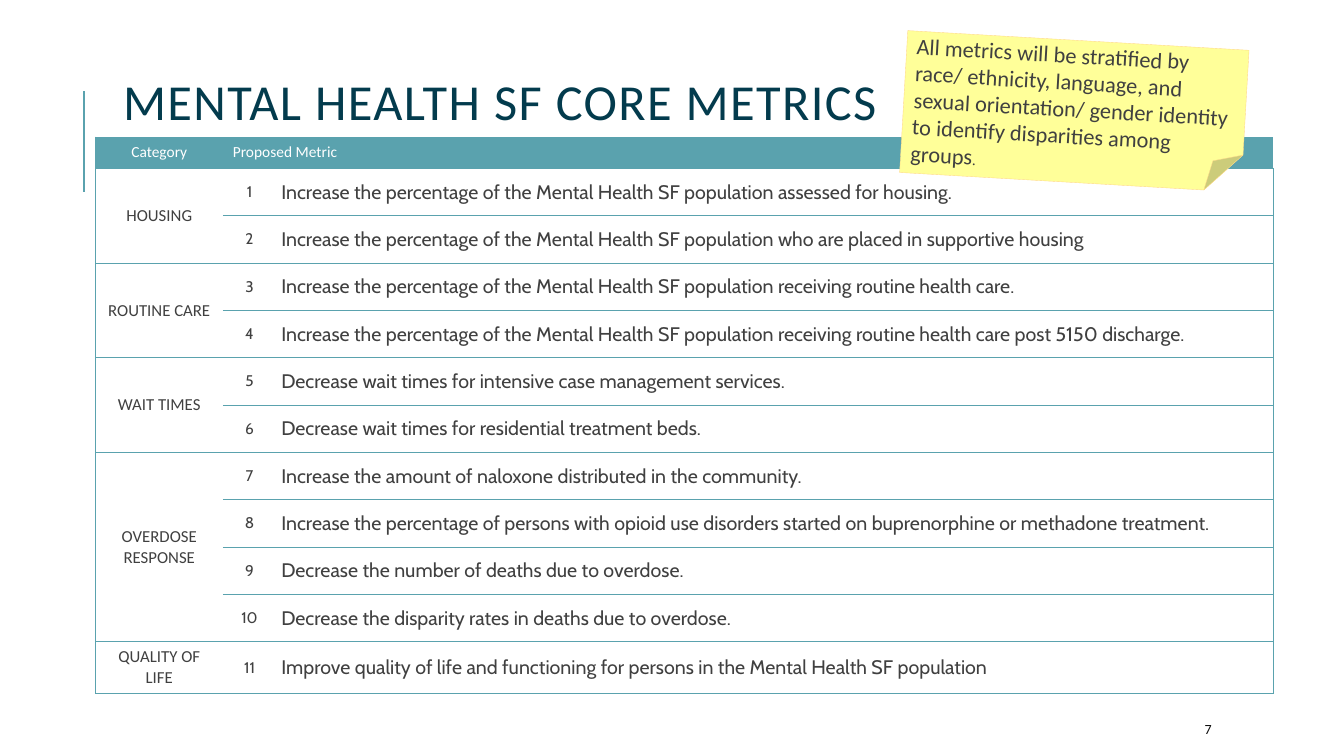
"""Build the Mental Health SF core metrics slide."""
from dataclasses import dataclass

from lxml.etree import SubElement
from pptx import Presentation
from pptx.dml.color import RGBColor
from pptx.enum.shapes import MSO_CONNECTOR, MSO_SHAPE
from pptx.enum.text import MSO_ANCHOR, PP_ALIGN
from pptx.oxml.ns import qn
from pptx.util import Inches, Pt


@dataclass(frozen=True)
class Theme:
    teal: RGBColor = RGBColor.from_string("5AA2AE")
    navy: RGBColor = RGBColor.from_string("033B4D")
    gray: RGBColor = RGBColor.from_string("404040")
    black: RGBColor = RGBColor.from_string("0D0D0D")
    white: RGBColor = RGBColor.from_string("FFFFFF")
    note: RGBColor = RGBColor.from_string("FFFF99")
    note_edge: RGBColor = RGBColor.from_string("FFD889")
    heading_font: str = "Calibri"
    metric_font: str = "Cabin"
    title_size: Pt = Pt(36)
    note_size: Pt = Pt(16)
    metric_size: Pt = Pt(14)
    category_size: Pt = Pt(12)
    small_size: Pt = Pt(11)
    page_size: Pt = Pt(10)


def set_text(frame, text, font_name, size, color, alignment=PP_ALIGN.LEFT):
    frame.text = text
    frame.word_wrap = True
    paragraph = frame.paragraphs[0]
    paragraph.alignment = alignment
    paragraph.font.name = font_name
    paragraph.font.size = size
    paragraph.font.color.rgb = color
    return paragraph


def set_borders(cell, sides):
    properties = cell._tc.get_or_add_tcPr()
    for side in "LRTB":
        line = SubElement(properties, qn(f"a:ln{side}"), w=str(Pt(0.75)))
        if side in sides:
            fill = SubElement(line, qn("a:solidFill"))
            SubElement(fill, qn("a:srgbClr"), val=str(theme.teal))
        else:
            SubElement(line, qn("a:noFill"))


theme = Theme()
groups = [
    ("HOUSING", [
        "Increase the percentage of the Mental Health SF population assessed for housing.",
        "Increase the percentage of the Mental Health SF population who are placed in supportive housing",
    ]),
    ("ROUTINE CARE", [
        "Increase the percentage of the Mental Health SF population receiving routine health care.",
        "Increase the percentage of the Mental Health SF population receiving routine health care post 5150 discharge.",
    ]),
    ("WAIT TIMES", [
        "Decrease wait times for intensive case management services.",
        "Decrease wait times for residential treatment beds.",
    ]),
    ("OVERDOSE RESPONSE", [
        "Increase the amount of naloxone distributed in the community.",
        "Increase the percentage of persons with opioid use disorders started on buprenorphine or methadone treatment.",
        "Decrease the number of deaths due to overdose.",
        "Decrease the disparity rates in deaths due to overdose.",
    ]),
    ("QUALITY OF LIFE", [
        "Improve quality of life and functioning for persons in the Mental Health SF population",
    ]),
]

presentation = Presentation()
presentation.slide_width = Inches(13.33)
presentation.slide_height = Inches(7.5)
slide = presentation.slides.add_slide(presentation.slide_layouts[5])

accent = slide.shapes.add_connector(
    MSO_CONNECTOR.STRAIGHT, Inches(0.83), Inches(1.9), Inches(0.83), Inches(0.9))
accent.line.color.rgb = theme.teal
accent.line.width = Pt(1.5)
SubElement(accent._element.spPr, qn("a:effectLst"))

title = slide.shapes.title
title.left, title.top = Inches(1.12), Inches(0.64)
title.width, title.height = Inches(10.91), Inches(0.83)
title.text_frame.vertical_anchor = MSO_ANCHOR.MIDDLE
paragraph = set_text(title.text_frame, "MENTAL HEALTH SF CORE METRICS",
                     theme.heading_font, theme.title_size, theme.navy)
paragraph.line_spacing = 0.8
paragraph.runs[0].font._element.set("spc", "100")

page_number = slide.shapes.add_textbox(Inches(11.85), Inches(7.08), Inches(1.06), Inches(0.3))
page_number.text_frame.vertical_anchor = MSO_ANCHOR.MIDDLE
set_text(page_number.text_frame, "7", theme.heading_font, theme.page_size, theme.black)

metric_count = sum(len(metrics) for _, metrics in groups)
table = slide.shapes.add_table(
    metric_count + 1, 3, Inches(0.95), Inches(1.36), Inches(11.68), Inches(5.53)).table
for column, width in zip(table.columns, (1.26, 0.53, 9.89)):
    column.width = Inches(width)
for row in table.rows:
    row.height = Inches(0.47)
table.rows[0].height = Inches(0.31)
table.rows[metric_count].height = Inches(0.51)
table.first_row = table.horz_banding = False

for row_index in range(metric_count + 1):
    for column_index, sides in enumerate(("LTB", "TB", "RTB")):
        cell = table.cell(row_index, column_index)
        set_borders(cell, sides)
        cell.fill.solid()
        cell.fill.fore_color.rgb = theme.white if row_index else theme.teal
        cell.vertical_anchor = MSO_ANCHOR.MIDDLE
        if row_index and column_index:
            cell.margin_left = cell.margin_right = Inches(0.05)

table.cell(0, 1).merge(table.cell(0, 2))
set_text(table.cell(0, 0).text_frame, "Category", theme.heading_font,
         theme.small_size, theme.white, PP_ALIGN.CENTER)
set_text(table.cell(0, 1).text_frame, "Proposed Metric", theme.heading_font,
         theme.small_size, theme.white)

number = 1
for category, metrics in groups:
    category_cell = table.cell(number, 0)
    if len(metrics) > 1:
        category_cell.merge(table.cell(number + len(metrics) - 1, 0))
    set_text(category_cell.text_frame, category, theme.heading_font,
             theme.category_size, theme.gray, PP_ALIGN.CENTER)
    for metric in metrics:
        set_text(table.cell(number, 1).text_frame, str(number), theme.metric_font,
                 theme.small_size, theme.gray, PP_ALIGN.CENTER)
        set_text(table.cell(number, 2).text_frame, metric, theme.metric_font,
                 theme.metric_size, theme.gray)
        number += 1

note = slide.shapes.add_shape(
    MSO_SHAPE.FOLDED_CORNER, Inches(8.96), Inches(0.4), Inches(3.39), Inches(1.41))
fold = note._element.spPr.find(qn("a:prstGeom")).get_or_add_avLst()
SubElement(fold, qn("a:gd"), name="adj", fmla="val 26100")
note.rotation = 3.3
note.shadow.inherit = False
note.fill.solid()
note.fill.fore_color.rgb = theme.note
note.line.color.rgb = theme.note_edge
note.line.width = Pt(0.25)
note.text_frame.vertical_anchor = MSO_ANCHOR.TOP
note.text_frame.margin_top = Inches(0.01)
note.text_frame.margin_bottom = Inches(-0.33)
paragraph = set_text(
    note.text_frame,
    "All metrics will be stratified by race/ ethnicity, language, and sexual orientation/ "
    "gender identity to identify disparities among groups",
    theme.heading_font, theme.note_size, theme.gray)
period = paragraph.add_run()
period.text = "."
period.font.size = theme.small_size

presentation.save("out.pptx")
